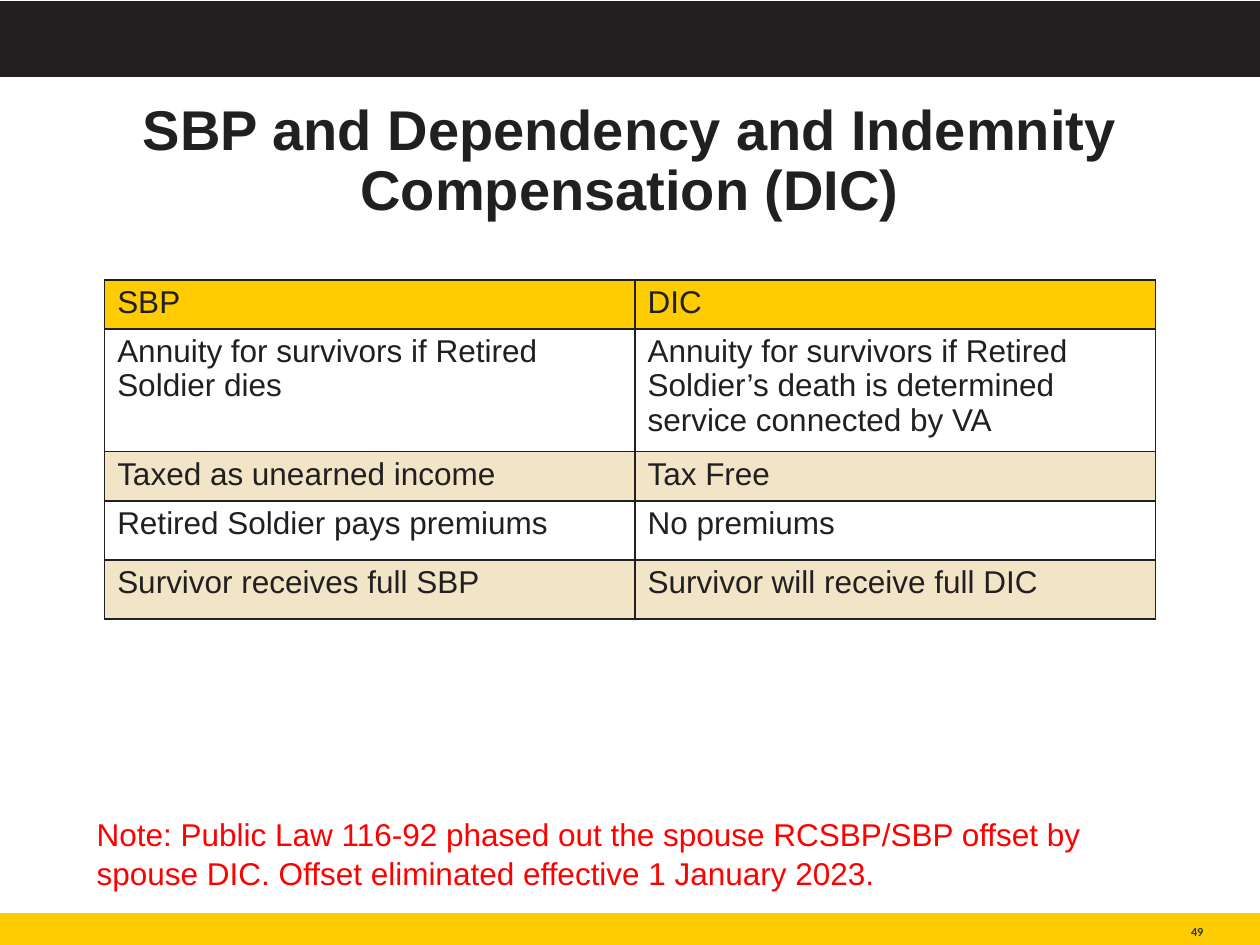
from lxml import etree
from pptx import Presentation
from pptx.dml.color import RGBColor
from pptx.enum.shapes import MSO_SHAPE as Shape
from pptx.enum.text import MSO_ANCHOR as Anchor, PP_ALIGN as Align
from pptx.oxml.ns import qn
from pptx.util import Cm, Pt

INK, GOLD, SAND, WHITE, RED, GREY = (
    "221F20", "FFCC01", "F1E4C7", "FFFFFF", "FF0000", "2F372F")
BODY = {"name": "Arial", "size": Pt(18), "bold": False}
TITLE = {"name": "Arial", "size": Pt(32), "bold": True}
NUMBER = {"name": "Calibri", "size": Pt(7), "bold": True}

COMPARISON = [
    ("SBP", "DIC"),
    ("Annuity for survivors if Retired Soldier dies",
     "Annuity for survivors if Retired Soldier’s death is determined "
     "service connected by VA"),
    ("Taxed as unearned income", "Tax Free"),
    ("Retired Soldier pays premiums", "No premiums"),
    ("Survivor receives full SBP", "Survivor will receive full DIC"),
]
COLUMN_WIDTHS = [10.69, 10.49]
ROW_HEIGHTS = [0.74, 1.83, 0.84, 1.19, 1.19]


def rgb(value):
    return RGBColor.from_string(value)


def write(frame, wording, font_format, color, **paragraph_format):
    paragraph = frame.paragraphs[0]
    paragraph.text = wording
    for key, value in paragraph_format.items():
        setattr(paragraph, key, value)
    font = paragraph.runs[0].font
    for key, value in font_format.items():
        setattr(font, key, value)
    font.color.rgb = rgb(color)


def add_band(slide, box, color):
    band = slide.shapes.add_shape(Shape.RECTANGLE, *map(Cm, box))
    band.shadow.inherit = False
    band.fill.solid()
    band.fill.fore_color.rgb = rgb(color)
    band.line.color.rgb = rgb(color)
    band.line.width = Pt(1)


def add_text(slide, box, wording, font_format, color, anchor=Anchor.TOP,
             wrap=True, **paragraph_format):
    frame = slide.shapes.add_textbox(*map(Cm, box)).text_frame
    frame.word_wrap = wrap
    frame.vertical_anchor = anchor
    write(frame, wording, font_format, color, **paragraph_format)
    return frame


def add_footer(slide, box):
    """Gold band with the page number near its right end."""
    left, top, width, _ = box
    add_band(slide, box, GOLD)
    number = add_text(slide, (left + width - 3.35, top, 2.21, 0.51), "49",
                      NUMBER, GREY, Anchor.BOTTOM, False,
                      alignment=Align.RIGHT)
    for side in ("left", "top", "right", "bottom"):
        setattr(number, f"margin_{side}", 0)


def outline(cell, color):
    properties = cell._tc.get_or_add_tcPr()
    for position, side in enumerate(("lnL", "lnR", "lnT", "lnB")):
        border = etree.Element(qn(f"a:{side}"), w=str(Pt(1)))
        fill = etree.SubElement(border, qn("a:solidFill"))
        etree.SubElement(fill, qn("a:srgbClr"), val=color)
        properties.insert(position, border)


def add_comparison(slide, box):
    table = slide.shapes.add_table(
        len(COMPARISON), len(COLUMN_WIDTHS), *map(Cm, box)).table
    for column, width in zip(table.columns, COLUMN_WIDTHS):
        column.width = Cm(width)
    for index, (row, wordings) in enumerate(zip(table.rows, COMPARISON)):
        row.height = Cm(ROW_HEIGHTS[index])
        color = GOLD if index == 0 else (SAND, WHITE)[index % 2]
        for cell, wording in zip(row.cells, wordings):
            cell.fill.solid()
            cell.fill.fore_color.rgb = rgb(color)
            outline(cell, INK)
            write(cell.text_frame, wording, BODY, INK, line_spacing=0.97)


def main():
    deck = Presentation()
    deck.slide_width, deck.slide_height = Cm(25.4), Cm(19.05)
    slide = deck.slides.add_slide(deck.slide_layouts[6])
    add_band(slide, (0, 0.03, 25.4, 1.5), INK)
    add_footer(slide, (0, 18.42, 25.4, 0.69))
    add_comparison(slide, (2.11, 5.64, sum(COLUMN_WIDTHS), sum(ROW_HEIGHTS)))
    add_text(slide, (1.7, 16.26, 22.23, 1.8),
             "Note: Public Law 116-92 phased out the spouse RCSBP/SBP offset "
             "by spouse DIC. Offset eliminated effective 1 January 2023.",
             BODY, RED, line_spacing=1.05)
    add_text(slide, (1.75, 1.88, 21.9, 2.79),
             "SBP and Dependency and Indemnity Compensation (DIC)",
             TITLE, INK, Anchor.MIDDLE,
             alignment=Align.CENTER, line_spacing=0.9)
    deck.save("out.pptx")


if __name__ == "__main__":
    main()
